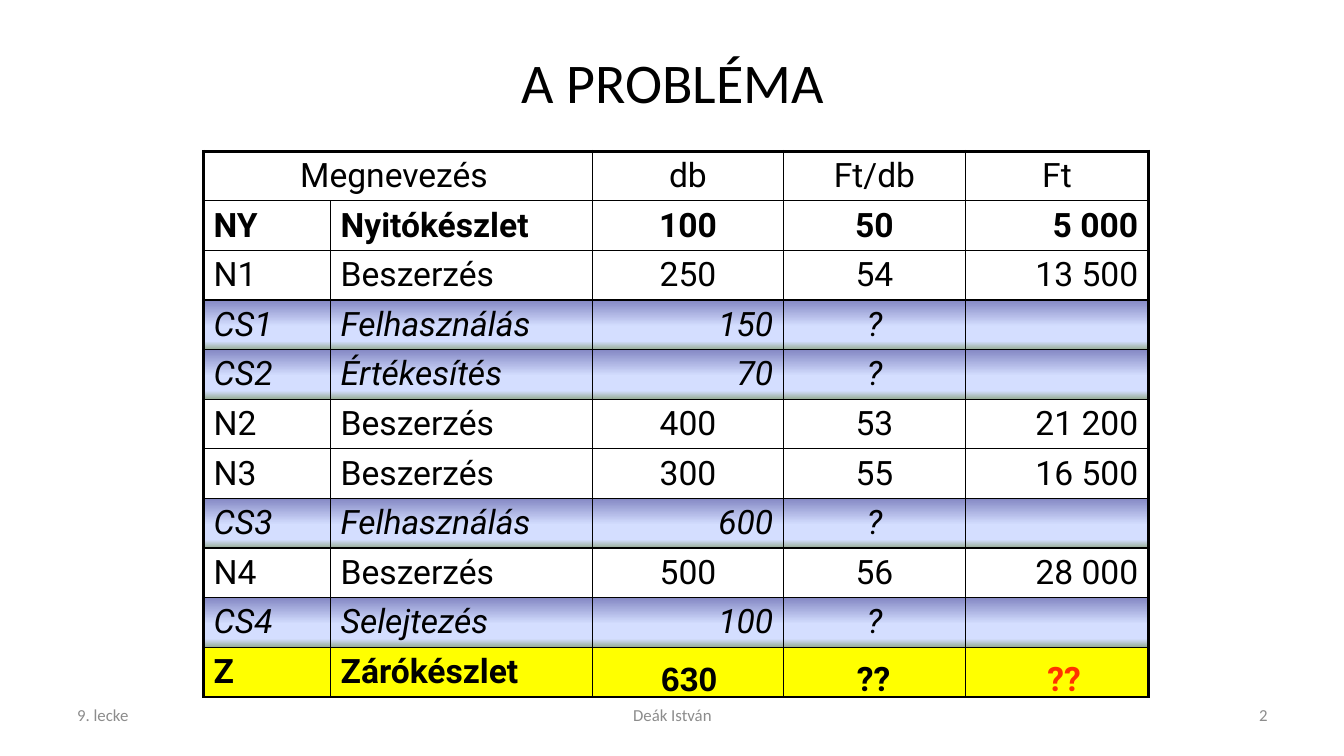
from dataclasses import dataclass

from lxml.etree import SubElement
from pptx import Presentation
from pptx.dml.color import RGBColor
from pptx.enum.text import MSO_ANCHOR, MSO_AUTO_SIZE, PP_ALIGN
from pptx.oxml.ns import qn
from pptx.util import Inches, Pt

LEFT, CENTER, RIGHT = PP_ALIGN.LEFT, PP_ALIGN.CENTER, PP_ALIGN.RIGHT
BLACK, WHITE, YELLOW, RED, GRAY = "000000", "FFFFFF", "FFFF00", "FF3300", "8C8C8C"
ISSUE_GRADIENT = [(0, "8488C4"), (53, "D4DEFF"), (83, "D4DEFF"), (100, "96AB94")]
THIN, THICK = Pt(1), Pt(2.25)

prs = Presentation()
prs.slide_width, prs.slide_height = Inches(13.33), Inches(7.5)


@dataclass(frozen=True)
class Box:
    """Position and size in percent of the slide."""
    left: float
    top: float
    width: float
    height: float

    def emu(self) -> tuple[int, int, int, int]:
        return (across(self.left), down(self.top),
                across(self.width), down(self.height))


@dataclass(frozen=True)
class RowStyle:
    aligns: tuple[PP_ALIGN, ...]
    bold: bool = False
    italic: bool = False
    fill: str | None = WHITE  # None stands for the issue gradient


@dataclass(frozen=True)
class Label:
    text: str
    box: Box
    align: PP_ALIGN = LEFT
    size: float = 12
    font: str = "Calibri"
    color: str = GRAY
    bold: bool = False
    wrap: bool = True


HEADER = RowStyle((CENTER,) * 5)
OPENING = RowStyle((LEFT, LEFT, CENTER, CENTER, RIGHT), bold=True)
PURCHASE = RowStyle(OPENING.aligns)
ISSUE = RowStyle((LEFT, LEFT, RIGHT, CENTER, RIGHT), italic=True, fill=None)
CLOSING = RowStyle(OPENING.aligns, bold=True, fill=YELLOW)

ROWS = [
    (HEADER, ("Megnevezés ", "", "db", "Ft/db", "Ft")),
    (OPENING, ("NY", "Nyitókészlet", "100", "50", "5 000")),
    (PURCHASE, ("N1", "Beszerzés", "250", "54", "13 500")),
    (ISSUE, ("CS1", "Felhasználás", "150", "?", "")),
    (ISSUE, ("CS2", "Értékesítés", "70", "?", "")),
    (PURCHASE, ("N2", "Beszerzés", "400", "53", "21 200")),
    (PURCHASE, ("N3", "Beszerzés", "300", "55", "16 500")),
    (ISSUE, ("CS3", "Felhasználás", "600", "?", "")),
    (PURCHASE, ("N4", "Beszerzés", "500", "56", "28 000")),
    (ISSUE, ("CS4", "Selejtezés", "100", "?", "")),
    (CLOSING, ("Z", "Zárókészlet", "", "", "")),
]
COLUMNS = (9.45, 19.5, 14.18, 13.58, 13.58)
ROW_HEIGHT = 6.55

TOTAL = dict(size=24, font="Roboto", color=BLACK, bold=True, wrap=False)
LABELS = [
    Label("9. lecke", Box(5, 91.07, 23.33, 6.93)),
    Label("Deák István", Box(34.2, 91.07, 31.66, 6.93), CENTER),
    Label("2", Box(71.72, 91.07, 23.33, 6.93), RIGHT),
    Label("630", Box(48.46, 86.4, 5.7, 6.67), **{**TOTAL, "font": "Arial"}),
    Label("??", Box(63.02, 86.4, 4.35, 6.67), **TOTAL),
    Label("??", Box(77.19, 86.4, 4.35, 6.67), **{**TOTAL, "color": RED}),
]


def across(percent: float) -> int:
    return round(prs.slide_width * percent / 100)


def down(percent: float) -> int:
    return round(prs.slide_height * percent / 100)


def rgb(value: str) -> RGBColor:
    return RGBColor.from_string(value)


def write(tf, text: str, *, size: float, font: str, color: str = BLACK,
          align: PP_ALIGN = LEFT, bold: bool = False, italic: bool = False) -> None:
    p = tf.paragraphs[0]
    p.alignment = align
    r = p.add_run()
    r.text = text
    r.font.size, r.font.name = Pt(size), font
    r.font.bold, r.font.italic = bold, italic
    r.font.color.rgb = rgb(color)


def add_color(parent, value: str) -> None:
    SubElement(parent, qn("a:srgbClr"), val=value)


def add_borders(cell, widths: dict[str, int]) -> None:
    tc_pr = cell._tc.get_or_add_tcPr()
    for side, width in widths.items():
        ln = SubElement(tc_pr, qn(f"a:ln{side}"), w=str(width))
        add_color(SubElement(ln, qn("a:solidFill")), BLACK)


def fill_cell(cell, color: str | None) -> None:
    if color:
        cell.fill.solid()
        cell.fill.fore_color.rgb = rgb(color)
        return
    grad = SubElement(cell._tc.get_or_add_tcPr(), qn("a:gradFill"), rotWithShape="1")
    stops = SubElement(grad, qn("a:gsLst"))
    for percent, value in ISSUE_GRADIENT:
        add_color(SubElement(stops, qn("a:gs"), pos=str(percent * 1000)), value)
    SubElement(grad, qn("a:lin"), ang="5400000", scaled="1")


def add_stock_table(slide) -> None:
    last_row, last_col = len(ROWS) - 1, len(COLUMNS) - 1
    box = Box(15.15, 20, sum(COLUMNS), ROW_HEIGHT * len(ROWS))
    table = slide.shapes.add_table(len(ROWS), len(COLUMNS), *box.emu()).table
    table.first_row = table.horz_banding = False
    for column, width in zip(table.columns, COLUMNS):
        column.width = across(width)
    for i, (style, texts) in enumerate(ROWS):
        table.rows[i].height = down(ROW_HEIGHT)
        for j, (text, align) in enumerate(zip(texts, style.aligns)):
            cell = table.cell(i, j)
            add_borders(cell, {
                "L": THICK if j == 0 else THIN,
                "R": THICK if j == last_col else THIN,
                "T": THICK if i == 0 else THIN,
                "B": THICK if i == last_row else THIN,
            })
            fill_cell(cell, style.fill)
            if text:
                write(cell.text_frame, text, size=24, font="Roboto", align=align,
                      bold=style.bold, italic=style.italic)
    table.cell(0, 0).merge(table.cell(0, 1))


def add_label(slide, label: Label) -> None:
    tf = slide.shapes.add_textbox(*label.box.emu()).text_frame
    tf.word_wrap = label.wrap
    if label.wrap:
        tf.vertical_anchor = MSO_ANCHOR.MIDDLE
    else:
        tf.auto_size = MSO_AUTO_SIZE.SHAPE_TO_FIT_TEXT
    write(tf, label.text, size=label.size, font=label.font, color=label.color,
          align=label.align, bold=label.bold)


def main() -> None:
    slide = prs.slides.add_slide(prs.slide_layouts[5])
    title = slide.shapes.title
    title.left, title.top, title.width, title.height = Box(16.28, 5.6, 67.52, 10.27).emu()
    title.text_frame.vertical_anchor = MSO_ANCHOR.MIDDLE
    write(title.text_frame, "A PROBLÉMA", size=40, font="Calibri", align=CENTER)
    add_stock_table(slide)
    for label in LABELS:
        add_label(slide, label)
    prs.save("out.pptx")


if __name__ == "__main__":
    main()
